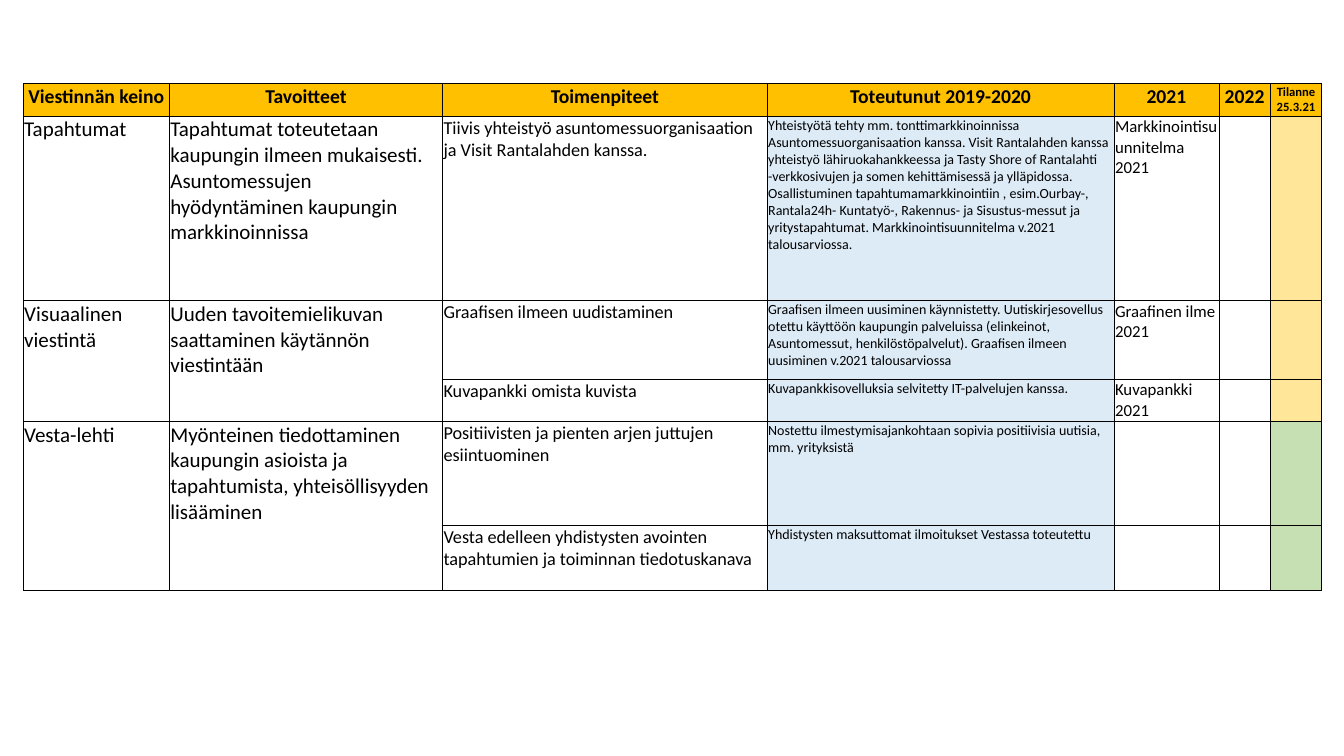
from lxml import etree
from pptx import Presentation
from pptx.dml.color import RGBColor
from pptx.enum import text
from pptx.oxml import ns
from pptx.util import Inches, Pt

FONT = "Calibri"
BLACK, WHITE, HEADER = "000000", "FFFFFF", "FFC000"
BLUE, YELLOW, GREEN = "DDEBF7", "FFE699", "C6E0B4"
COLUMN_WIDTHS = [1.45, 2.71, 3.22, 3.44, 1.04, 0.51, 0.51]
ROW_HEIGHTS = [0.32, 1.83, 0.78, 0.42, 1.03, 0.65]
BODY_SIZES = [15, 15, 13, 10, 12, 12, 12]
BODY_FILLS = [WHITE, WHITE, WHITE, BLUE, None, None]
STATUS_FILLS = [YELLOW, YELLOW, YELLOW, GREEN, GREEN]
SPLIT_ROWS = {2, 4}  # the first two columns continue into the next row

HEADINGS = ["Viestinnän keino", "Tavoitteet", "Toimenpiteet",
            "Toteutunut 2019-2020", "2021", "2022", "Tilanne 25.3.21"]
BODY = [
    ["Tapahtumat",
     "Tapahtumat toteutetaan kaupungin ilmeen mukaisesti. Asuntomessujen "
     "hyödyntäminen kaupungin markkinoinnissa",
     "Tiivis yhteistyö asuntomessuorganisaation ja Visit Rantalahden kanssa.",
     "Yhteistyötä tehty mm. tonttimarkkinoinnissa Asuntomessuorganisaation kanssa. "
     "Visit Rantalahden kanssa yhteistyö lähiruokahankkeessa ja Tasty Shore of Rantalahti "
     "-verkkosivujen ja somen kehittämisessä ja ylläpidossa. Osallistuminen "
     "tapahtumamarkkinointiin , esim.Ourbay-, Rantala24h- Kuntatyö-, Rakennus- ja "
     "Sisustus-messut ja yritystapahtumat. Markkinointisuunnitelma v.2021 talousarviossa.",
     "Markkinointisuunnitelma 2021"],
    ["Visuaalinen viestintä",
     "Uuden tavoitemielikuvan saattaminen käytännön viestintään",
     "Graafisen ilmeen uudistaminen",
     "Graafisen ilmeen uusiminen käynnistetty. Uutiskirjesovellus otettu käyttöön "
     "kaupungin palveluissa (elinkeinot, Asuntomessut, henkilöstöpalvelut). "
     "Graafisen ilmeen uusiminen v.2021 talousarviossa",
     "Graafinen ilme 2021"],
    ["", "", "Kuvapankki omista kuvista",
     "Kuvapankkisovelluksia selvitetty IT-palvelujen kanssa.",
     "Kuvapankki 2021"],
    ["Vesta-lehti",
     "Myönteinen tiedottaminen kaupungin asioista ja tapahtumista, "
     "yhteisöllisyyden lisääminen",
     "Positiivisten ja pienten arjen juttujen esiintuominen",
     "Nostettu ilmestymisajankohtaan sopivia positiivisia uutisia, mm. yrityksistä",
     ""],
    ["", "",
     "Vesta edelleen yhdistysten avointen tapahtumien ja toiminnan tiedotuskanava",
     "Yhdistysten maksuttomat ilmoitukset Vestassa toteutettu",
     ""],
]


def color(hex_value):
    return RGBColor.from_string(hex_value)


def write(cell, words, size, bold=False, align=text.PP_ALIGN.LEFT):
    cell.margin_left = cell.margin_right = cell.margin_top = Inches(0.01)
    cell.margin_bottom = 0
    paragraph = cell.text_frame.paragraphs[0]
    paragraph.alignment = align
    paragraph.font.size = Pt(size)
    if words:
        run = paragraph.add_run()
        run.text = words
        run.font.name = FONT
        run.font.size = Pt(size)
        run.font.bold = bold
        run.font.color.rgb = color(BLACK)


class PlanSlide:
    def __init__(self, presentation):
        self.slide = presentation.slides.add_slide(presentation.slide_layouts[6])

    def table(self, left, top, widths, heights):
        frame = self.slide.shapes.add_table(
            len(heights), len(widths), Inches(left), Inches(top),
            Inches(sum(widths)), Inches(sum(heights)))
        table = frame.table
        table.first_row = table.horz_banding = False
        for column, width in zip(table.columns, widths):
            column.width = Inches(width)
        for row, height in zip(table.rows, heights):
            row.height = Inches(height)
        return table

    def paint(self, cell, fill, sides):
        """Draw thin borders on the given sides (of L, R, T, B), then fill the cell."""
        properties = cell._tc.get_or_add_tcPr()
        for side in "LRTB":
            line = etree.SubElement(properties, ns.qn(f"a:ln{side}"), w=str(Pt(0.5)))
            if side in sides:
                solid = etree.SubElement(line, ns.qn("a:solidFill"))
                etree.SubElement(solid, ns.qn("a:srgbClr"), val=BLACK)
            else:
                etree.SubElement(line, ns.qn("a:noFill"))
        if fill:
            cell.fill.solid()
            cell.fill.fore_color.rgb = color(fill)
        else:
            cell.fill.background()


def main():
    presentation = Presentation()
    presentation.slide_width = Inches(13.33)
    presentation.slide_height = Inches(7.5)
    plan = PlanSlide(presentation)
    table = plan.table(0.23, 0.83, COLUMN_WIDTHS, ROW_HEIGHTS)

    for column, heading in enumerate(HEADINGS):
        cell = table.cell(0, column)
        size = 9 if column == len(HEADINGS) - 1 else 14
        write(cell, heading, size, bold=True, align=text.PP_ALIGN.CENTER)
        plan.paint(cell, HEADER, "LRTB")

    for row, (entries, status) in enumerate(zip(BODY, STATUS_FILLS), start=1):
        words = entries + ["", ""]
        for column, fill in enumerate(BODY_FILLS + [status]):
            cell = table.cell(row, column)
            write(cell, words[column], BODY_SIZES[column])
            sides = "LRTB"
            if column < 2 and row in SPLIT_ROWS:
                sides = "LRT"
            elif column < 2 and row - 1 in SPLIT_ROWS:
                sides = "LRB"
            plan.paint(cell, fill, sides)

    presentation.save("out.pptx")


if __name__ == "__main__":
    main()
